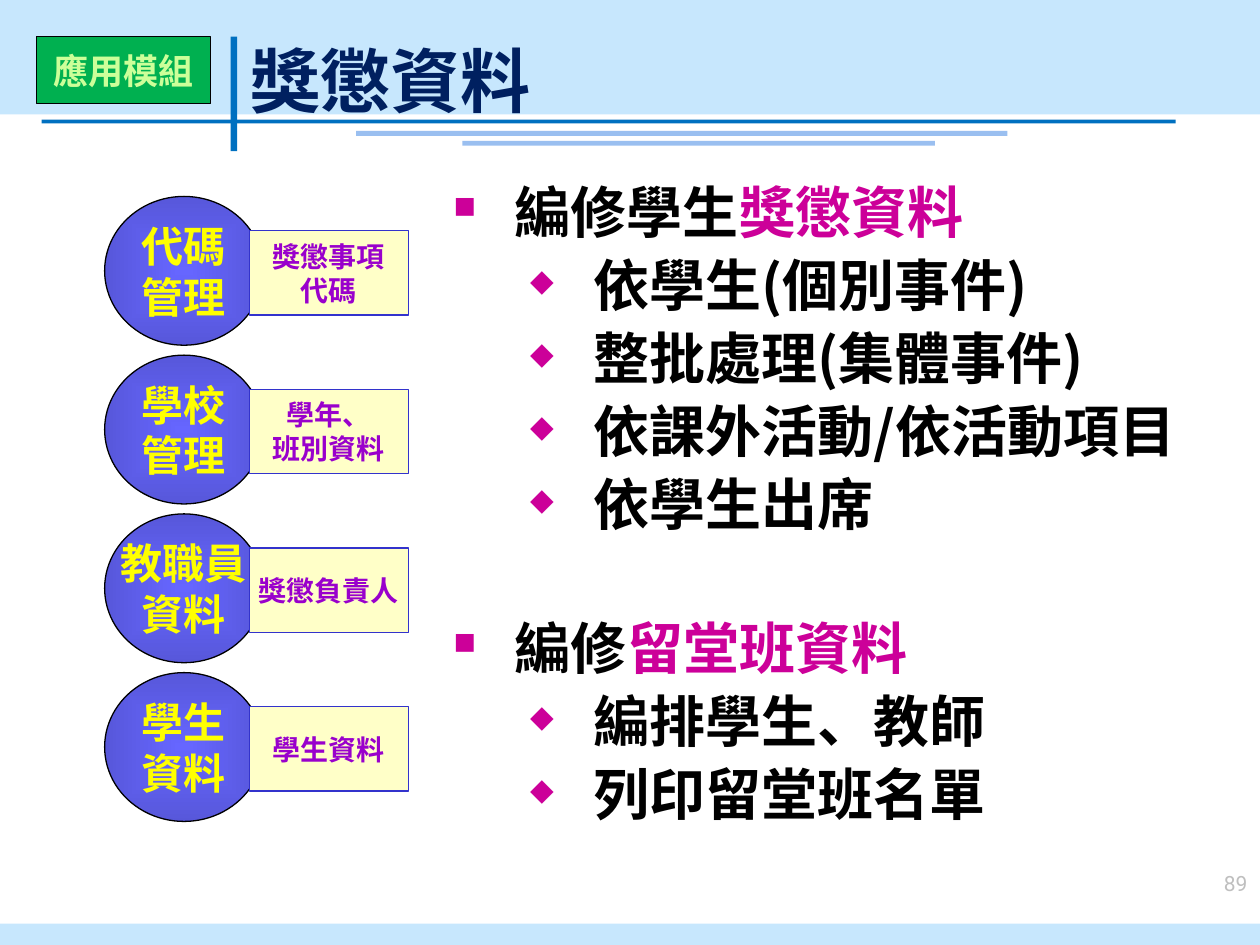
from dataclasses import dataclass

from lxml import etree
from pptx import Presentation
from pptx.dml.color import RGBColor
from pptx.enum.shapes import MSO_SHAPE
from pptx.enum.text import MSO_ANCHOR, PP_ALIGN
from pptx.oxml import parse_xml
from pptx.oxml.ns import nsdecls, qn
from pptx.util import Cm, Pt

RECTANGLE, OVAL = MSO_SHAPE.RECTANGLE, MSO_SHAPE.OVAL
TOP, MIDDLE, BOTTOM = MSO_ANCHOR.TOP, MSO_ANCHOR.MIDDLE, MSO_ANCHOR.BOTTOM
LEFT, CENTER, RIGHT = PP_ALIGN.LEFT, PP_ALIGN.CENTER, PP_ALIGN.RIGHT
TITLE_ONLY = 5


@dataclass(frozen=True)
class Theme:
    font: str = "Noto Sans CJK SC"
    number_font: str = "Roboto"
    band: str = "C7E7FD"
    rule: str = "0070C0"
    soft_rule: str = "9ABFF0"
    title: str = "002060"
    text: str = "000000"
    white: str = "FFFFFF"
    accent: str = "CC0099"
    number: str = "BFBFBF"
    badge: str = "00B050"
    badge_text: str = "CCFF99"
    circle_center: str = "6666FF"
    circle_edge: str = "5757DA"
    circle_text: str = "FFFF00"
    label: str = "FFFFC8"
    label_line: str = "3333CC"
    label_text: str = "9900CC"
    title_size: int = 40
    body_size: int = 32
    circle_size: int = 24
    badge_size: int = 20
    label_size: int = 16
    number_size: int = 12
    line_pitch: float = 1.21


THEME = Theme()

MODULES = [
    ("代碼\n管理", "獎懲事項\n代碼"),
    ("學校\n管理", "學年、\n班別資料"),
    ("教職員\n資料", "獎懲負責人"),
    ("學生\n資料", "學生資料"),
]

TOPICS = [
    ("編修學生", "獎懲資料",
     ["依學生(個別事件)", "整批處理(集體事件)", "依課外活動/依活動項目", "依學生出席"]),
    ("編修", "留堂班資料", ["編排學生、教師", "列印留堂班名單"]),
]


def rgb(color):
    return RGBColor.from_string(color)


def style_run(run, size, color, font=THEME.font, bold=True):
    run.font.size = Pt(size)
    run.font.bold = bold
    run.font.color.rgb = rgb(color)
    run.font.name = font
    east_asian = etree.SubElement(run.font._element, qn("a:ea"))
    east_asian.set("typeface", font)


def style_text(text_frame, size, color, alignment, anchor):
    text_frame.vertical_anchor = anchor
    for paragraph in text_frame.paragraphs:
        paragraph.alignment = alignment
        paragraph.line_spacing = Pt(size * THEME.line_pitch)
        for run in paragraph.runs:
            style_run(run, size, color)


def add_block(shapes, kind, box, fill, line=None):
    shape = shapes.add_shape(kind, *map(Cm, box))
    shape.shadow.inherit = False
    shape.fill.solid()
    shape.fill.fore_color.rgb = rgb(fill)
    if line:
        shape.line.color.rgb = rgb(line)
        shape.line.width = Pt(0.75)
    else:
        shape.line.fill.background()
    return shape


def add_caption(shape, text, size, color):
    shape.text_frame.text = text
    shape.text_frame.word_wrap = False
    style_text(shape.text_frame, size, color, CENTER, MIDDLE)


def fill_radial(shape):
    shape.fill.gradient()
    colors = (THEME.circle_center, THEME.circle_edge)
    for stop, color, position in zip(shape.fill.gradient_stops, colors, (0, 1)):
        stop.color.rgb = rgb(color)
        stop.position = position
    gradient = shape._element.spPr.find(qn("a:gradFill"))
    gradient.replace(gradient.find(qn("a:lin")), parse_xml(
        f'<a:path {nsdecls("a")} path="shape">'
        '<a:fillToRect l="50000" t="50000" r="50000" b="50000"/></a:path>'))


def add_frame(slide, width, height):
    bars = [
        ((0, 0, width, 2.31), THEME.band),
        ((0, height - 0.43, width, 0.43), THEME.band),
        ((4.65, 0.74, 0.13, 2.31), THEME.rule),
        ((0.84, 2.41, 22.86, 0.08), THEME.rule),
        ((7.18, 2.64, 13.13, 0.1), THEME.soft_rule),
        ((9.32, 2.84, 9.53, 0.1), THEME.soft_rule),
    ]
    for box, color in bars:
        add_block(slide.shapes, RECTANGLE, box, color)


def add_title(slide, box, text):
    title = slide.shapes.title
    title.left, title.top, title.width, title.height = map(Cm, box)
    title.text_frame.text = text
    title.text_frame.word_wrap = True
    title.text_frame.margin_bottom = 0
    style_text(title.text_frame, THEME.title_size, THEME.title, LEFT, BOTTOM)
    title._element.getparent().append(title._element)


def add_badge(slide, box, text):
    badge = add_block(slide.shapes, RECTANGLE, box, THEME.badge, THEME.text)
    add_caption(badge, text, THEME.badge_size, THEME.badge_text)


def add_modules(slide, left, top, pitch):
    for index, (name, detail) in enumerate(MODULES):
        y = top + index * pitch
        group = slide.shapes.add_group_shape()
        circle = add_block(group.shapes, OVAL, (left, y, 3.2, 3),
                           THEME.circle_center, THEME.text)
        fill_radial(circle)
        add_caption(circle, name, THEME.circle_size, THEME.circle_text)
        label = add_block(group.shapes, RECTANGLE, (left + 2.92, y + 0.69, 3.2, 1.7),
                          THEME.label, THEME.label_line)
        add_caption(label, detail, THEME.label_size, THEME.label_text)


def set_bullet(paragraph, symbol, margin, indent):
    properties = paragraph._p.get_or_add_pPr()
    properties.set("marL", str(Cm(margin)))
    properties.set("indent", str(Cm(-indent)))
    for xml in (f'<a:buClr {nsdecls("a")}><a:srgbClr val="{THEME.accent}"/></a:buClr>',
                f'<a:buSzPct {nsdecls("a")} val="55000"/>',
                f'<a:buChar {nsdecls("a")} char="{symbol}"/>'):
        properties.append(parse_xml(xml))


def add_outline(slide, box):
    outline = slide.shapes.add_textbox(*map(Cm, box))
    outline.fill.solid()
    outline.fill.fore_color.rgb = rgb(THEME.white)
    text_frame = outline.text_frame
    text_frame.word_wrap = True
    text_frame.margin_top = Cm(0.23)
    rows = []
    for index, (verb, subject, items) in enumerate(TOPICS):
        rows.append((0, 44 if index else 0, [(verb, THEME.text), (subject, THEME.accent)]))
        rows += [(1, 3, [(item, THEME.text)]) for item in items]
    for index, (level, space, parts) in enumerate(rows):
        paragraph = text_frame.add_paragraph() if index else text_frame.paragraphs[0]
        paragraph.level = level
        paragraph.alignment = LEFT
        paragraph.line_spacing = Pt(THEME.body_size * THEME.line_pitch)
        paragraph.space_before = Pt(space)
        set_bullet(paragraph, *(("■", 1.24, 1.24), ("◆", 2.82, 1.27))[level])
        for text, color in parts:
            run = paragraph.add_run()
            run.text = text
            style_run(run, THEME.body_size, color)


def add_number(slide, box, text):
    number = slide.shapes.add_textbox(*map(Cm, box))
    number.text_frame.text = text
    number.text_frame.word_wrap = True
    paragraph = number.text_frame.paragraphs[0]
    paragraph.alignment = RIGHT
    style_run(paragraph.runs[0], THEME.number_size, THEME.number, THEME.number_font, False)


def main():
    presentation = Presentation()
    presentation.slide_width, presentation.slide_height = Cm(25.4), Cm(19.05)
    slide = presentation.slides.add_slide(presentation.slide_layouts[TITLE_ONLY])
    add_frame(slide, 25.4, 19.05)
    add_title(slide, (4.8, 0.33, 7.11, 2.11), "獎懲資料")
    add_outline(slide, (8.89, 3.33, 15.39, 14.15))
    add_number(slide, (21.11, 17.42, 4.29, 1.27), "89")
    add_badge(slide, (0.74, 0.74, 3.51, 1.35), "應用模組")
    add_modules(slide, left=2.11, top=3.96, pitch=3.2)
    presentation.save("out.pptx")


if __name__ == "__main__":
    main()
